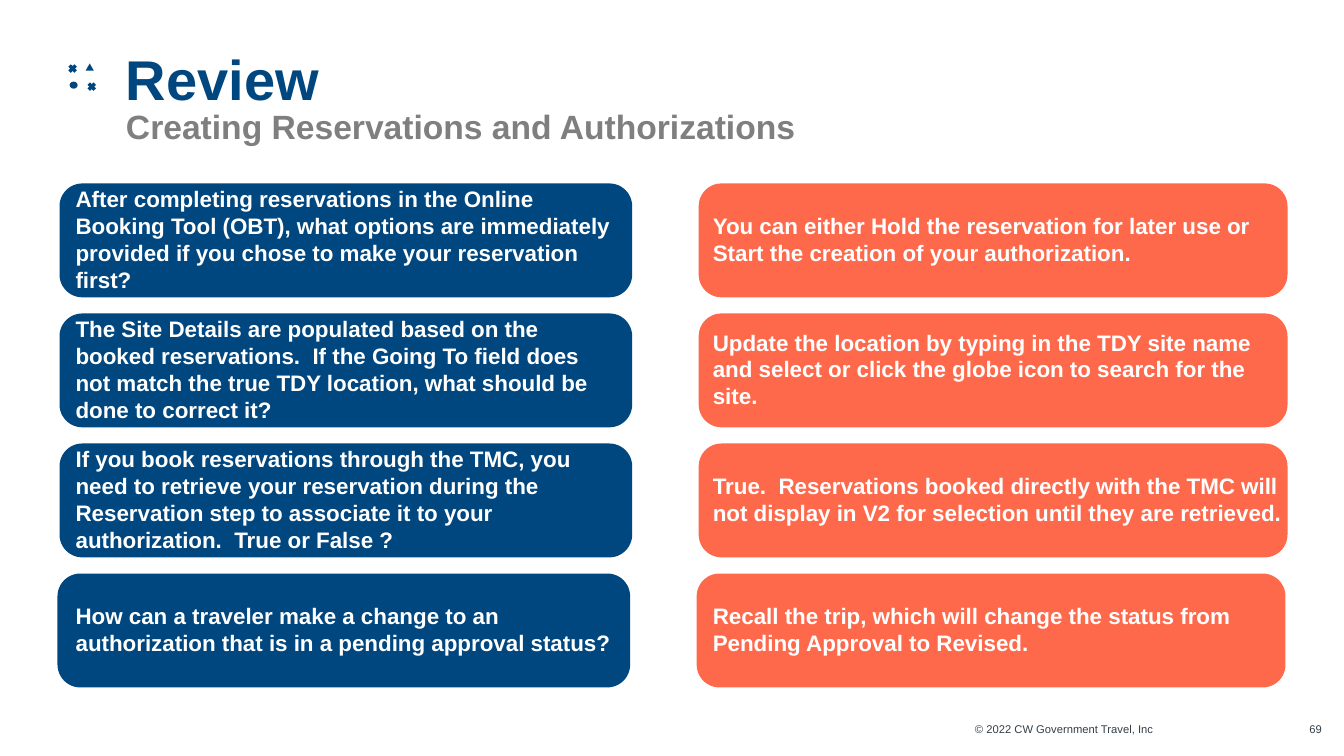
from lxml.etree import SubElement
from pptx import Presentation
from pptx.dml.color import RGBColor
from pptx.enum.shapes import MSO_CONNECTOR, MSO_SHAPE
from pptx.enum.text import MSO_ANCHOR, PP_ALIGN
from pptx.oxml.ns import qn
from pptx.util import Inches, Pt

NAVY = RGBColor(0x00, 0x46, 0x7F)
CORAL = RGBColor(0xFF, 0x69, 0x4B)
GRAY = RGBColor(0x7F, 0x7F, 0x7F)
SLATE = RGBColor(0x33, 0x3F, 0x48)
WHITE = RGBColor(0xFF, 0xFF, 0xFF)

# Card grid, in inches
FIRST_ROW, ROW_PITCH, CARD_HEIGHT = 1.82, 1.29, 1.13
# card left, card width, text left, text width, fill
QUESTION_COLUMN = (0.59, 5.68, 0.75, 5.33, NAVY)
ANSWER_COLUMN = (6.93, 5.84, 7.07, 5.7, CORAL)
LAST_ROW_SHIFT = -0.02

REVIEW = [
    ("After completing reservations in the Online Booking Tool (OBT), what options are "
     "immediately provided if you chose to make your reservation first?",
     "You can either Hold the reservation for later use or Start the creation of your "
     "authorization."),
    ("The Site Details are populated based on the booked reservations.  If the Going To "
     "field does not match the true TDY location, what should be done to correct it?",
     "Update the location by typing in the TDY site name and select or click the globe "
     "icon to search for the site."),
    ("If you book reservations through the TMC, you need to retrieve your reservation during "
     "the Reservation step to associate it to your authorization.  True or False ?",
     "True.  Reservations booked directly with the TMC will not display in V2 for selection "
     "until they are retrieved."),
    ("How can a traveler make a change to an authorization that is in a pending approval "
     "status?",
     "Recall the trip, which will change the status from Pending Approval to Revised."),
]

prs = Presentation()
prs.slide_width, prs.slide_height = Inches(13.33), Inches(7.5)
slide = prs.slides.add_slide(prs.slide_layouts[6])
shapes = slide.shapes


def add_text(box, text, size, color, bold=False, align=PP_ALIGN.LEFT, anchor=MSO_ANCHOR.TOP):
    frame = shapes.add_textbox(*map(Inches, box)).text_frame
    frame.margin_left = frame.margin_right = frame.margin_top = frame.margin_bottom = 0
    frame.word_wrap = True
    frame.vertical_anchor = anchor
    paragraph = frame.paragraphs[0]
    paragraph.text = text
    paragraph.alignment = align
    font = paragraph.font
    font.name, font.size, font.bold = "Arial", Pt(size), bold
    font.color.rgb = color
    return paragraph


def add_outline(points, closed, width):
    builder = shapes.build_freeform(*points[0], scale=Inches(1))
    builder.add_line_segments(points[1:], close=closed)
    outline = builder.convert_to_shape()
    outline.shadow.inherit = False
    outline.fill.background()
    outline.line.color.rgb = NAVY
    outline.line.width = Pt(width)
    return outline


# Icon: head in profile with a game plan inside
add_outline([(1.05, 0.73), (1.05, 0.8), (1.03, 0.87), (1.0, 0.93), (0.98, 0.99), (0.98, 1.07),
             (0.88, 1.13), (0.79, 1.17), (0.76, 1.12), (0.7, 1.08), (0.61, 1.07), (0.57, 1.03),
             (0.56, 0.97), (0.55, 0.92), (0.51, 0.89), (0.55, 0.8), (0.57, 0.74), (0.58, 0.68),
             (0.61, 0.61), (0.67, 0.56), (0.74, 0.53), (0.82, 0.52), (0.89, 0.54),
             (0.97, 0.59), (1.03, 0.66)], True, 3.25)
add_outline([(0.73, 0.85), (0.75, 0.8), (0.79, 0.78), (0.84, 0.76), (0.88, 0.73),
             (0.89, 0.68)], False, 2.25)
for preset, box in ((MSO_SHAPE.OVAL, (0.69, 0.81, 0.08, 0.07)),
                    (MSO_SHAPE.ISOSCELES_TRIANGLE, (0.85, 0.63, 0.08, 0.07))):
    mark = shapes.add_shape(preset, *map(Inches, box))
    mark.shadow.inherit = False
    mark.fill.solid()
    mark.fill.fore_color.rgb = NAVY
    mark.line.fill.background()
for center_x, center_y in ((0.72, 0.68), (0.91, 0.86)):
    for slope in (1, -1):
        stroke = shapes.add_connector(
            MSO_CONNECTOR.STRAIGHT,
            Inches(center_x - 0.03), Inches(center_y - 0.03 * slope),
            Inches(center_x + 0.03), Inches(center_y + 0.03 * slope))
        stroke.line.color.rgb = NAVY
        stroke.line.width = Pt(2.5)
        SubElement(stroke._element.spPr, qn("a:effectLst"))

# Title and subtitle
title = add_text((1.25, 0.53, 11.53, 0.92), "Review", 40, NAVY, True,
                 anchor=MSO_ANCHOR.BOTTOM)
title.line_spacing = 0.85
title.add_line_break()
subtitle = title.add_run()
subtitle.text = "Creating Reservations and Authorizations"
subtitle.font.size = Pt(24)
subtitle.font.color.rgb = GRAY

# Question and answer cards
for row, pair in enumerate(REVIEW):
    top = FIRST_ROW + row * ROW_PITCH
    shift = LAST_ROW_SHIFT if row == len(REVIEW) - 1 else 0
    for text, column in zip(pair, (QUESTION_COLUMN, ANSWER_COLUMN)):
        left, width, text_left, text_width, fill = column
        card = shapes.add_shape(MSO_SHAPE.ROUNDED_RECTANGLE, Inches(left + shift), Inches(top),
                                Inches(width), Inches(CARD_HEIGHT))
        card.adjustments[0] = 0.2
        card.shadow.inherit = False
        card.fill.solid()
        card.fill.fore_color.rgb = fill
        card.line.fill.background()
        add_text((text_left, top - 0.01, text_width, CARD_HEIGHT - 0.01), text, 16, WHITE, True,
                 anchor=MSO_ANCHOR.MIDDLE)

# Footer
for box, text in (((8.38, 7.17, 3.06, 0.14), "© 2022 CW Government Travel, Inc"),
                  ((12.88, 7.17, 0.23, 0.14), "69")):
    add_text(box, text, 8, SLATE, align=PP_ALIGN.RIGHT)

prs.save("out.pptx")
